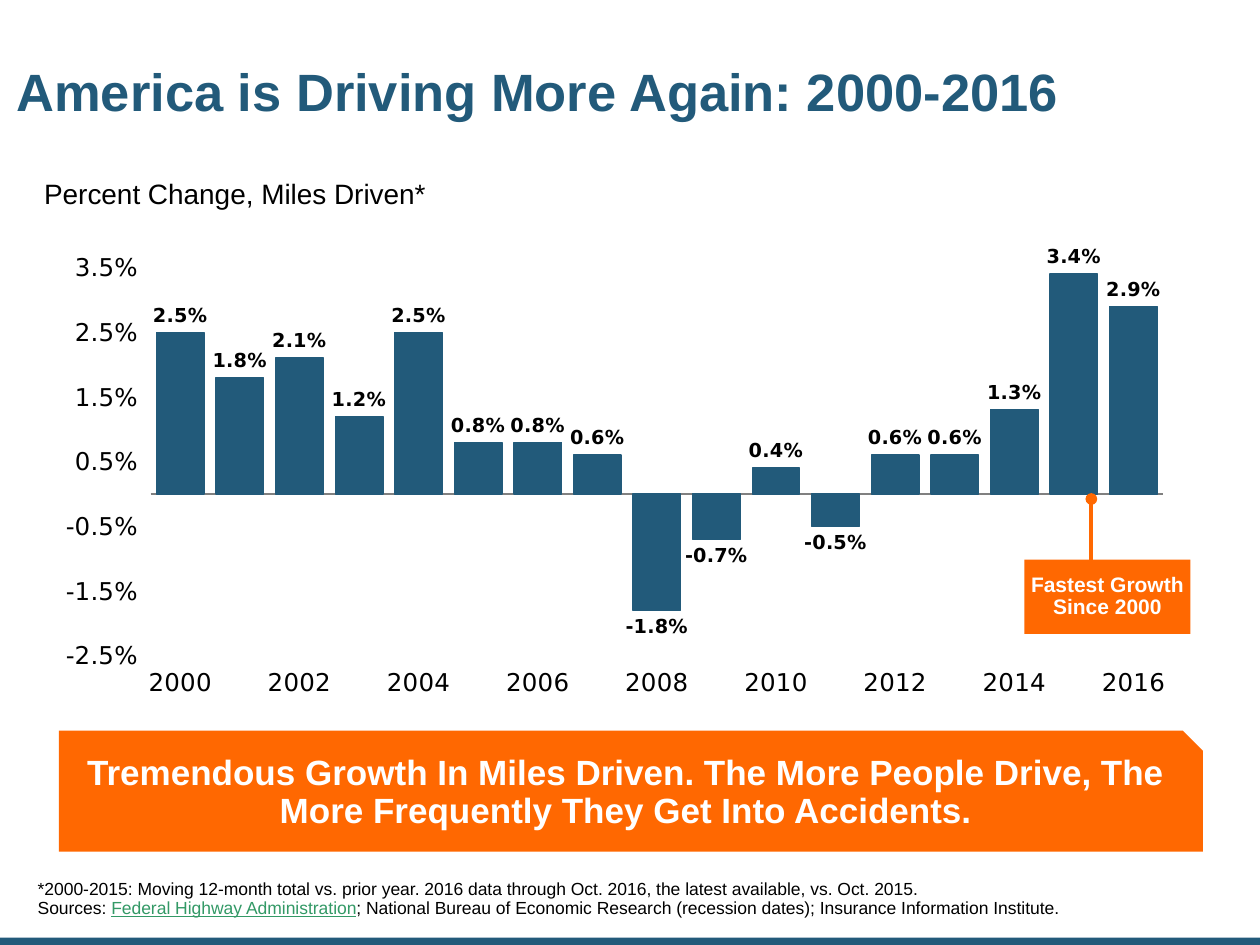
from lxml import etree
from pptx import Presentation
from pptx import util as u
from pptx.chart import data as chart_data
from pptx.dml.color import RGBColor
from pptx.enum import chart as ch
from pptx.enum import shapes, text
from pptx.oxml import parse_xml
from pptx.oxml.ns import nsdecls, qn

BLUE, ORANGE, GREEN = "225A7A", "FF6801", "339966"
BLACK, WHITE, GRAY = "000000", "FFFFFF", "808080"
TOP, MIDDLE, BOTTOM = (text.MSO_ANCHOR.TOP, text.MSO_ANCHOR.MIDDLE,
                       text.MSO_ANCHOR.BOTTOM)
CENTER = text.PP_ALIGN.CENTER

CHANGES = [0.025, 0.018, 0.021, 0.012, 0.025, 0.008, 0.008, 0.006, -0.018,
           -0.007, 0.004, -0.005, 0.006, 0.006, 0.013, 0.034, 0.029]


def color(hex_string):
    return RGBColor.from_string(hex_string)


def lengths(*values):
    return [u.Cm(value) for value in values]


def write(shape, *runs, size, fill=BLACK, bold=False, align=None, anchor=TOP,
          insets=(0.13, 0.13, 0.13, 0.13)):
    """Fill a shape with one paragraph; a run is text or (text, link colour), "\\n" a line break."""
    frame = shape.text_frame
    frame.word_wrap = True
    frame.vertical_anchor = anchor
    (frame.margin_left, frame.margin_top,
     frame.margin_right, frame.margin_bottom) = lengths(*insets)
    paragraph = frame.paragraphs[0]
    paragraph.alignment = align
    paragraph.line_spacing = 0.9
    for item in runs:
        if item == "\n":
            paragraph.add_line_break()
            continue
        words, link_color = (item, None) if isinstance(item, str) else item
        run = paragraph.add_run()
        run.text = words
        run.font.name = "Arial"
        run.font.size = u.Pt(size)
        run.font.bold = bold
        run.font.color.rgb = color(link_color or fill)
        if link_color:
            run.font.underline = True


def add_text(parent, box, *runs, **style):
    write(parent.add_textbox(*lengths(*box)), *runs, **style)


def add_block(parent, kind, box, fill):
    block = parent.add_shape(kind, *lengths(*box))
    block.shadow.inherit = False
    block.fill.solid()
    block.fill.fore_color.rgb = color(fill)
    block.line.fill.background()
    return block


def set_plot_area(chart, x, y, width, height):
    """Fix the inner plot area, in fractions of the chart."""
    plot_area = chart._chartSpace.chart.plotArea
    for old in plot_area.findall(qn("c:layout")):
        plot_area.remove(old)
    sizes = "".join(f'<c:{tag} val="{value}"/>' for tag, value in
                    zip("xywh", (x, y, width, height)))
    plot_area.insert(0, parse_xml(
        f'<c:layout {nsdecls("c")}><c:manualLayout>'
        '<c:layoutTarget val="inner"/><c:xMode val="edge"/>'
        f'<c:yMode val="edge"/>{sizes}</c:manualLayout></c:layout>'))


def add_miles_chart(parent, box):
    data = chart_data.CategoryChartData(number_format="0.0%")
    data.categories = [str(year) if year % 2 == 0 else ""
                       for year in range(2000, 2000 + len(CHANGES))]
    data.add_series("Series 1", CHANGES)
    chart = parent.add_chart(ch.XL_CHART_TYPE.COLUMN_CLUSTERED,
                             *lengths(*box), data).chart
    chart.has_legend = False
    chart.has_title = False
    chart.font.name = "DejaVu Sans"
    chart.font.size = u.Pt(14)
    chart.font.color.rgb = color(BLACK)
    set_plot_area(chart, 0.09, 0.06, 0.89, 0.78)

    years, percent = chart.category_axis, chart.value_axis
    for axis in (years, percent):
        axis.has_major_gridlines = False
        axis.major_tick_mark = ch.XL_TICK_MARK.NONE
        axis.tick_label_position = ch.XL_TICK_LABEL_POSITION.LOW
    years.format.line.color.rgb = color(GRAY)
    years.format.line.width = u.Pt(0.75)
    percent.format.line.fill.background()
    percent.minimum_scale, percent.maximum_scale = -0.025, 0.04
    percent.major_unit = 0.01
    percent.tick_labels.number_format = "0.0%"
    percent.tick_labels.number_format_is_linked = False

    plot = chart.plots[0]
    plot.gap_width = 25
    plot.vary_by_categories = False
    columns = plot.series[0]
    columns.invert_if_negative = False
    columns.format.fill.solid()
    columns.format.fill.fore_color.rgb = color(BLUE)
    columns.format.line.color.rgb = color(BLUE)
    columns.format.line.width = u.Pt(0.75)
    labels = columns.data_labels
    labels.show_value = True
    labels.position = ch.XL_LABEL_POSITION.OUTSIDE_END
    labels.number_format = "0.0%"
    labels.number_format_is_linked = False
    labels.font.name = "DejaVu Sans"
    labels.font.size = u.Pt(11)
    labels.font.bold = True
    labels.font.color.rgb = color(BLACK)


def add_callout(parent, box, *runs, pointer_offset, pointer_height):
    """Place a label with a dot-ended pointer rising from its top edge."""
    left, top = box[:2]
    group = parent.add_group_shape().shapes
    label = add_block(group, shapes.MSO_SHAPE.RECTANGLE, box, ORANGE)
    write(label, *runs, size=12, fill=WHITE, bold=True, align=CENTER,
          anchor=MIDDLE, insets=(0.13, 0, 0.13, 0))
    x = left + pointer_offset
    pointer = group.add_connector(shapes.MSO_CONNECTOR.STRAIGHT,
                                  *lengths(x, top, x, top - pointer_height))
    pointer.line.color.rgb = color(ORANGE)
    pointer.line.width = u.Pt(2.25)
    etree.SubElement(pointer.line._get_or_add_ln(), qn("a:tailEnd"), type="oval")
    etree.SubElement(pointer._element.spPr, qn("a:effectLst"))


def add_banner(parent, box, *runs):
    banner = add_block(parent, shapes.MSO_SHAPE.SNIP_1_RECTANGLE, box, ORANGE)
    write(banner, *runs, size=20, fill=WHITE, bold=True, align=CENTER,
          anchor=MIDDLE, insets=(0.25, 0.13, 0.25, 0.25))


def main():
    presentation = Presentation()
    presentation.slide_width, presentation.slide_height = lengths(25.4, 19.05)
    slide = presentation.slides.add_slide(presentation.slide_layouts[6])
    parent = slide.shapes

    add_block(parent, shapes.MSO_SHAPE.RECTANGLE, (0, 18.9, 25.4, 0.15), BLUE)
    add_text(parent, (0.2, 0.58, 23.5, 2.64),
             "America is Driving More Again: 2000-2016",
             size=30, fill=BLUE, bold=True, anchor=MIDDLE)
    add_text(parent, (0.76, 3.51, 23.5, 1.09), "Percent Change, Miles Driven*",
             size=16)
    add_text(parent, (0.76, 17.37, 21.34, 1.14),
             "*2000-2015: Moving 12-month total vs. prior year. 2016 data "
             "through Oct. 2016, the latest available, vs. Oct. 2015.",
             "\n", "Sources: ", ("Federal Highway Administration", GREEN),
             "; National Bureau of Economic Research (recession dates); "
             "Insurance Information Institute.",
             size=10, anchor=BOTTOM, insets=(0, 0, 0, 0))
    add_miles_chart(parent, (0.97, 4.09, 22.94, 10.87))
    add_callout(parent, (20.65, 11.28, 3.35, 1.5), "Fastest Growth Since 2000",
                pointer_offset=1.35, pointer_height=1.22)
    add_banner(parent, (1.19, 14.73, 23.06, 2.44),
               "Tremendous Growth In Miles Driven. The More People Drive, "
               "The More Frequently They Get Into Accidents.")
    presentation.save("out.pptx")


if __name__ == "__main__":
    main()
